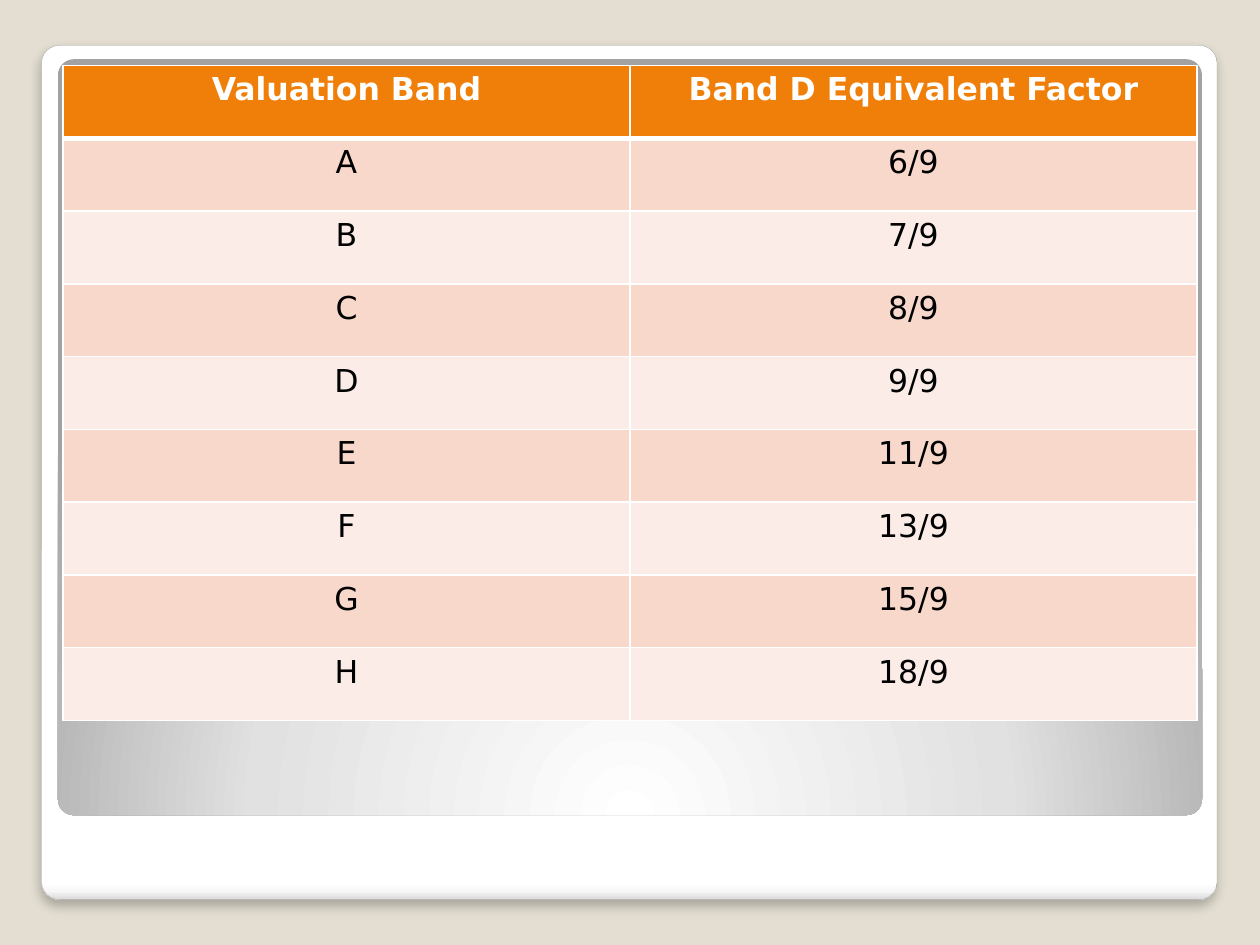
from lxml import etree
from pptx import Presentation
from pptx.dml.color import RGBColor
from pptx.enum.shapes import MSO_SHAPE as SHAPE
from pptx.enum.text import PP_ALIGN as ALIGN
from pptx.oxml import parse_xml
from pptx.oxml.ns import nsdecls, qn
from pptx.util import Inches, Pt


def rgb(value):
    return RGBColor.from_string(value)


def sub(parent, tag, **attrs):
    values = {name: str(value) for name, value in attrs.items()}
    return etree.SubElement(parent, qn(tag), values)


class SlideBuilder:
    font = "DejaVu Sans"
    size = 18
    white = "FFFFFF"
    black = "000000"
    header = "F07F09"
    bands = ("F9D8CC", "FCECE7")

    def __init__(self, prs, background):
        self.slide = prs.slides.add_slide(prs.slide_layouts[6])
        fill = self.slide.background.fill
        fill.solid()
        fill.fore_color.rgb = rgb(background)

    def panel(self, left, top, width, height, stops, line=None):
        box = [Inches(n) for n in (left, top, width, height)]
        sp = self.slide.shapes.add_shape(SHAPE.ROUNDED_RECTANGLE, *box)
        sp.adjustments[0] = 0.021
        sp.shadow.inherit = False
        if line:
            sp.line.color.rgb = rgb(line)
            sp.line.width = Pt(0.16)
        else:
            sp.line.fill.background()
        grad = parse_xml(f'<a:gradFill {nsdecls("a")} rotWithShape="1"/>')
        gs_list = sub(grad, "a:gsLst")
        for position, color in stops:
            gs = sub(gs_list, "a:gs", pos=position * 1000)
            sub(gs, "a:srgbClr", val=color)
        sp._element.spPr.find(qn("a:prstGeom")).addnext(grad)
        return sp, grad

    def linear_panel(self, *box, stops, line):
        sp, grad = self.panel(*box, stops, line)
        sub(grad, "a:lin", ang=5400000, scaled=0)
        effects = sp._element.spPr.find(qn("a:effectLst"))
        shadow = sub(effects, "a:outerShdw", blurRad=Pt(6), dist=Pt(4),
                     dir=5400000, algn="t", rotWithShape=0)
        color = sub(shadow, "a:srgbClr", val=self.black)
        sub(color, "a:alpha", val=25000)

    def radial_panel(self, *box, stops):
        sp, grad = self.panel(*box, stops)
        circle = sub(grad, "a:path", path="circle")
        sub(circle, "a:fillToRect", l=50000, t=175000, r=50000, b=-75000)

    def borders(self, cell, bottom):
        tc_pr = cell._tc.get_or_add_tcPr()
        widths = {"L": 1, "R": 1, "T": 1, "B": bottom}
        for i, (side, width) in enumerate(widths.items()):
            ln = sub(tc_pr, f"a:ln{side}", w=Pt(width))
            sub(sub(ln, "a:solidFill"), "a:srgbClr", val=self.white)
            tc_pr.insert(i, ln)

    def cell(self, cell, text, fill, color, bold):
        cell.fill.solid()
        cell.fill.fore_color.rgb = rgb(fill)
        self.borders(cell, 3 if bold else 1)
        cell.text_frame.text = text
        p = cell.text_frame.paragraphs[0]
        p.alignment = ALIGN.CENTER
        font = p.runs[0].font
        font.name = self.font
        font.size = Pt(self.size)
        font.bold = bold
        font.color.rgb = rgb(color)

    def table(self, left, top, width, height, rows):
        box = [Inches(n) for n in (left, top, width, height)]
        table = self.slide.shapes.add_table(len(rows), len(rows[0]), *box).table
        for r, row in enumerate(rows):
            is_header = r == 0
            fill = self.header if is_header else self.bands[(r - 1) % 2]
            color = self.white if is_header else self.black
            for c, text in enumerate(row):
                self.cell(table.cell(r, c), text, fill, color, is_header)


def main():
    prs = Presentation()
    prs.slide_width = Inches(10)
    prs.slide_height = Inches(7.5)
    s = SlideBuilder(prs, "E3DED1")
    s.linear_panel(0.33, 0.36, 9.33, 6.78, line="A4A4A4",
                   stops=[(0, "FFFFFF"), (98, "FFFFFF"), (99, "F7F7F7"), (100, "DADADA")])
    s.radial_panel(0.46, 0.47, 9.08, 6,
                   stops=[(0, "FFFFFF"), (55, "E1E1E1"), (100, "A2A2A2")])
    ninths = (6, 7, 8, 9, 11, 13, 15, 18)
    factors = [(band, f"{n}/9") for band, n in zip("ABCDEFGH", ninths)]
    s.table(0.5, 0.52, 9, 5.2,
            [("Valuation Band", "Band D Equivalent Factor"), *factors])
    prs.save("out.pptx")


if __name__ == "__main__":
    main()
